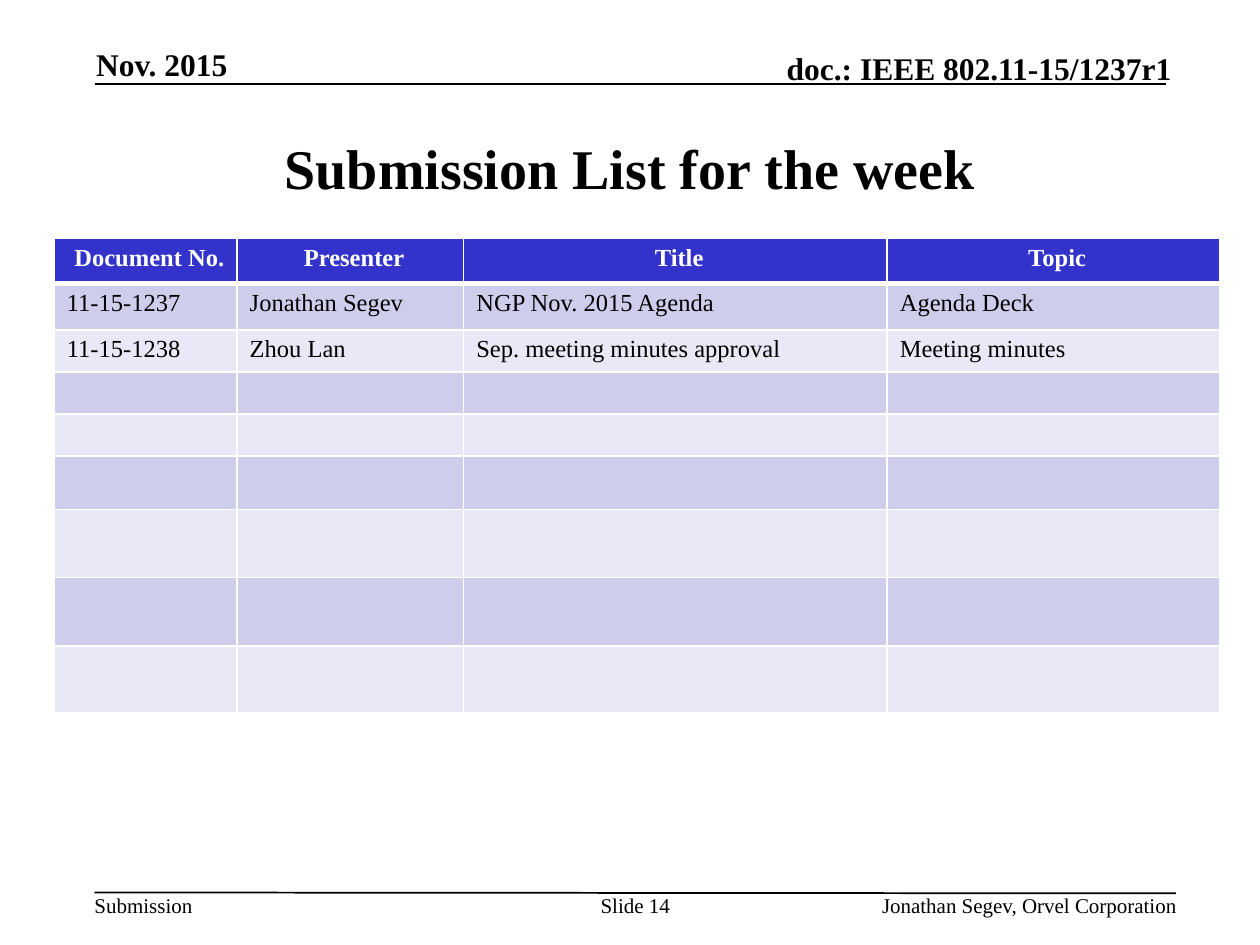
"""Build the submission list slide for the week."""
from lxml import etree
from pptx import Presentation, util as u
from pptx.dml.color import RGBColor
from pptx.enum import shapes, text
from pptx.oxml import ns

COLORS = {"ink": "000000", "paper": "FFFFFF", "header": "3333CC",
          "odd": "CECEEC", "even": "E8E8F6"}
FONT = "Times New Roman"
LEFT, CENTER, RIGHT = (text.PP_ALIGN.LEFT, text.PP_ALIGN.CENTER, text.PP_ALIGN.RIGHT)
TOP, MIDDLE, BOTTOM = (text.MSO_ANCHOR.TOP, text.MSO_ANCHOR.MIDDLE, text.MSO_ANCHOR.BOTTOM)

COLUMN_WIDTHS = [104.5, 129.5, 242, 190]
ROW_HEIGHTS = [26, 26.5, 22.5, 22.5, 22.5, 30.5, 39, 39, 38.5]
SUBMISSIONS = [
    ["Document No.", "Presenter", "Title", "Topic"],
    ["11-15-1237", "Jonathan Segev", "NGP Nov. 2015 Agenda", "Agenda Deck"],
    ["11-15-1238", "Zhou Lan", "Sep. meeting minutes approval", "Meeting minutes"],
]


class SlideBuilder:
    def __init__(self, slide):
        self.slide = slide

    def color(self, name):
        return RGBColor.from_string(COLORS[name])

    def place(self, shape, left, top, width, height):
        shape.left, shape.top = u.Pt(left), u.Pt(top)
        shape.width, shape.height = u.Pt(width), u.Pt(height)

    def add_words(self, frame, words, size, bold=False, color="ink", align=LEFT):
        para = frame.paragraphs[0]
        para.alignment = align
        span = para.add_run()
        span.text = words
        span.font.name, span.font.size, span.font.bold = FONT, u.Pt(size), bold
        span.font.color.rgb = self.color(color)

    def title(self, words, *bounds):
        box = self.slide.shapes.title
        self.place(box, *bounds)
        frame = box.text_frame
        frame.auto_size = text.MSO_AUTO_SIZE.NONE
        frame.vertical_anchor = MIDDLE
        self.add_words(frame, words, 32, True, align=CENTER)

    def label(self, words, bounds, size, bold=False, align=LEFT, anchor=TOP, wrap=True):
        box = self.slide.shapes.add_textbox(*map(u.Pt, bounds))
        frame = box.text_frame
        frame.margin_left = frame.margin_right = 0
        frame.margin_top = frame.margin_bottom = 0
        frame.word_wrap, frame.vertical_anchor = wrap, anchor
        self.add_words(frame, words, size, bold, align=align)

    def rule(self, left, top, right, bottom):
        line = self.slide.shapes.add_connector(
            shapes.MSO_CONNECTOR.STRAIGHT, *map(u.Pt, (left, top, right, bottom)))
        line.line.color.rgb = self.color("ink")
        line.line.width = u.Pt(1)
        etree.SubElement(line._element.spPr, ns.qn("a:effectLst"))

    def border(self, cell, side, width):
        properties = cell._tc.get_or_add_tcPr()
        edge = etree.SubElement(properties, ns.qn(f"a:ln{side}"), w=str(u.Pt(width)))
        fill = etree.SubElement(edge, ns.qn("a:solidFill"))
        etree.SubElement(fill, ns.qn("a:srgbClr"), val=COLORS["paper"])

    def cell(self, cell, words, row):
        header = row == 0
        for side in "LRTB":
            heavy = (header and side == "B") or (row == 1 and side == "T")
            self.border(cell, side, 3 if heavy else 1)
        cell.fill.solid()
        cell.fill.fore_color.rgb = self.color(
            "header" if header else "odd" if row % 2 else "even")
        cell.margin_left = u.Pt(7.2)
        cell.margin_right = u.Pt(3 if header else 7.2)
        cell.margin_top = cell.margin_bottom = u.Pt(3.6)
        if words:
            self.add_words(cell.text_frame, words, 14, header,
                           "paper" if header else "ink", CENTER if header else LEFT)
        else:
            para = cell.text_frame.paragraphs[0]
            etree.SubElement(para._p, ns.qn("a:endParaRPr"), sz="1400")

    def table(self, rows, left, top, widths, heights):
        frame = self.slide.shapes.add_table(
            len(heights), len(widths),
            *map(u.Pt, (left, top, sum(widths), sum(heights))))
        grid = frame.table
        for column, width in zip(grid.columns, widths):
            column.width = u.Pt(width)
        for index, height in enumerate(heights):
            grid.rows[index].height = u.Pt(height)
            words = rows[index] if index < len(rows) else [""] * len(widths)
            for column, entry in enumerate(words):
                self.cell(grid.cell(index, column), entry, index)


def main():
    deck = Presentation()
    deck.slide_width, deck.slide_height = u.Pt(720), u.Pt(540)
    page = SlideBuilder(deck.slides.add_slide(deck.slide_layouts[5]))

    page.rule(54, 48, 666, 48)
    page.label("Submission", (54, 510, 56, 14.5), 12, wrap=False)
    page.rule(54, 510, 672, 510.5)
    page.label("doc.: IEEE 802.11-15/1237r1", (394, 28, 275.5, 21.5), 18, True, RIGHT, BOTTOM)
    page.title("Submission List for the week", 54, 54, 612, 83.5)
    page.label("Slide 14", (342, 510, 42, 29), 12, align=CENTER)
    page.label("Jonathan Segev, Orvel Corporation", (422, 510, 250.5, 14.5), 12, align=RIGHT)
    page.label("Nov. 2015", (55, 26, 147.5, 21.5), 18, True, anchor=BOTTOM)
    page.table(SUBMISSIONS, 31, 136, COLUMN_WIDTHS, ROW_HEIGHTS)

    deck.save("out.pptx")


if __name__ == "__main__":
    main()
